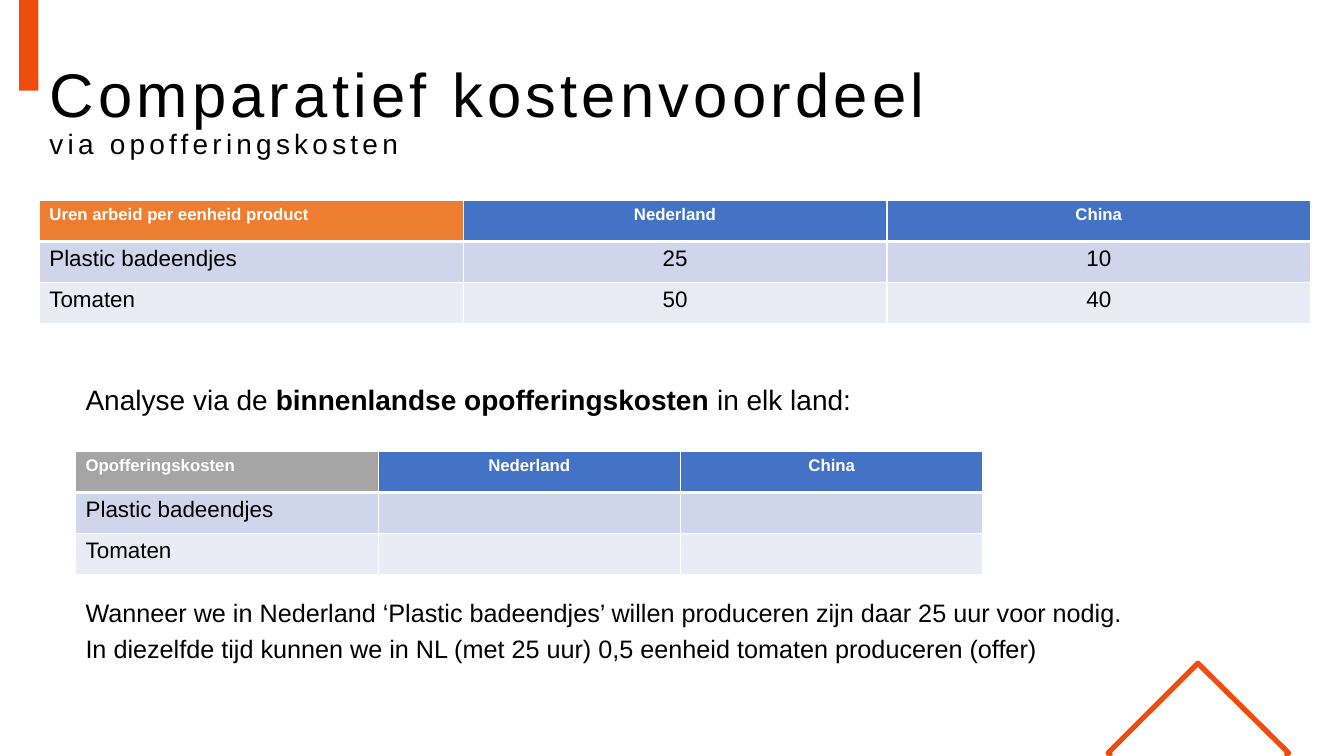
from lxml import etree
from pptx import Presentation
from pptx.dml.color import RGBColor
from pptx.enum.shapes import MSO_SHAPE
from pptx.enum.text import MSO_ANCHOR, PP_ALIGN
from pptx.oxml.ns import qn
from pptx.util import Inches, Pt

COLORS = {
    "black": "000000", "white": "FFFFFF", "accent": "ED4D0F",
    "orange": "ED7D31", "gray": "A5A5A5", "blue": "4472C4",
    "band_dark": "CFD5EA", "band_light": "E9EBF5",
}


def add_run(paragraph, text, size, color="black", bold=False):
    run = paragraph.add_run()
    run.text = text
    formats = {"name": "Arial", "size": Pt(size), "bold": bold}
    for attribute, value in formats.items():
        setattr(run.font, attribute, value)
    run.font.color.rgb = RGBColor.from_string(COLORS[color])
    return run


def add_border(cell, side, width):
    line = etree.SubElement(cell._tc.get_or_add_tcPr(), qn(f"a:ln{side}"), w=str(Pt(width)))
    fill = etree.SubElement(line, qn("a:solidFill"))
    etree.SubElement(fill, qn("a:srgbClr"), val=COLORS["white"])


presentation = Presentation()
presentation.slide_width = Inches(13.33)
presentation.slide_height = Inches(7.5)
slide = presentation.slides.add_slide(presentation.slide_layouts[5])

bar = slide.shapes.add_shape(
    MSO_SHAPE.RECTANGLE, Inches(0.19), Inches(-0.25), Inches(0.19), Inches(1.15))
bar.shadow.inherit = False
bar.fill.solid()
bar.fill.fore_color.rgb = RGBColor.from_string(COLORS["accent"])
bar.line.fill.background()

corner_points = [(12.75, 7.5), (12.78, 7.47), (11.88, 6.58), (10.99, 7.47), (11.02, 7.5)]
corner_points = [(Inches(x), Inches(y)) for x, y in corner_points]
builder = slide.shapes.build_freeform(*corner_points[0])
builder.add_line_segments(corner_points[1:], close=False)
corner = builder.convert_to_shape()
corner.shadow.inherit = False
corner.fill.background()
corner.line.color.rgb = RGBColor.from_string(COLORS["accent"])
corner.line.width = Pt(3.75)

title = slide.shapes.title
title_box = {"left": 0.39, "top": 0.39, "width": 12.61, "height": 1.45}
for attribute, value in title_box.items():
    setattr(title, attribute, Inches(value))
title.text_frame.vertical_anchor = MSO_ANCHOR.MIDDLE
title.text_frame.word_wrap = True
title_paragraph = title.text_frame.paragraphs[0]
title_paragraph.alignment = PP_ALIGN.LEFT
title_paragraph.line_spacing = 0.9
heading = add_run(title_paragraph, "Comparatief kostenvoordeel", 44)
title_paragraph.add_line_break()
subheading = add_run(title_paragraph, "via opofferingskosten", 20)
for run in (heading, subheading):
    run._r.get_or_add_rPr().set("spc", "300")

tables = [
    (0.39, 1.99, 12.61, "orange", [
        ["Uren arbeid per eenheid product", "Nederland", "China"],
        ["Plastic badeendjes", "25", "10"],
        ["Tomaten", "50", "40"],
    ]),
    (0.75, 4.48, 9, "gray", [
        ["Opofferingskosten", "Nederland", "China"],
        ["Plastic badeendjes", "", ""],
        ["Tomaten", "", ""],
    ]),
]
row_fills = ["blue", "band_dark", "band_light"]
for left, top, width, label_fill, rows in tables:
    table = slide.shapes.add_table(
        3, 3, Inches(left), Inches(top), Inches(width), Inches(1.22)).table
    for row_index, row in enumerate(rows):
        is_header = row_index == 0
        for column_index, text in enumerate(row):
            cell = table.cell(row_index, column_index)
            widths = {"L": 1, "R": 1, "T": 3 if row_index == 1 else 1, "B": 3 if is_header else 1}
            for side, border_width in widths.items():
                add_border(cell, side, border_width)
            fill = label_fill if is_header and column_index == 0 else row_fills[row_index]
            cell.fill.solid()
            cell.fill.fore_color.rgb = RGBColor.from_string(COLORS[fill])
            paragraph = cell.text_frame.paragraphs[0]
            paragraph.alignment = PP_ALIGN.CENTER if column_index else PP_ALIGN.LEFT
            if text:
                add_run(paragraph, text, 12 if is_header else 16,
                        "white" if is_header else "black", is_header)

text_boxes = [
    (3.75, 9, 0.64, 20, [
        [("Analyse via de ", False), ("binnenlandse opofferingskosten ", True),
         ("in elk land:", False)],
    ]),
    (5.88, 10.64, 1.1, 18, [
        [("Wanneer we in Nederland ‘Plastic badeendjes’ willen produceren "
          "zijn daar 25 uur voor nodig.", False)],
        [("In diezelfde tijd kunnen we in NL (met 25 uur) 0,5 eenheid tomaten "
          "produceren (offer)", False)],
    ]),
]
for top, width, height, size, paragraphs in text_boxes:
    frame = slide.shapes.add_textbox(
        Inches(0.75), Inches(top), Inches(width), Inches(height)).text_frame
    frame.word_wrap = True
    for index, runs in enumerate(paragraphs):
        paragraph = frame.add_paragraph() if index else frame.paragraphs[0]
        paragraph.space_before = Pt(4)
        for text, bold in runs:
            add_run(paragraph, text, size, bold=bold)

presentation.save("out.pptx")
